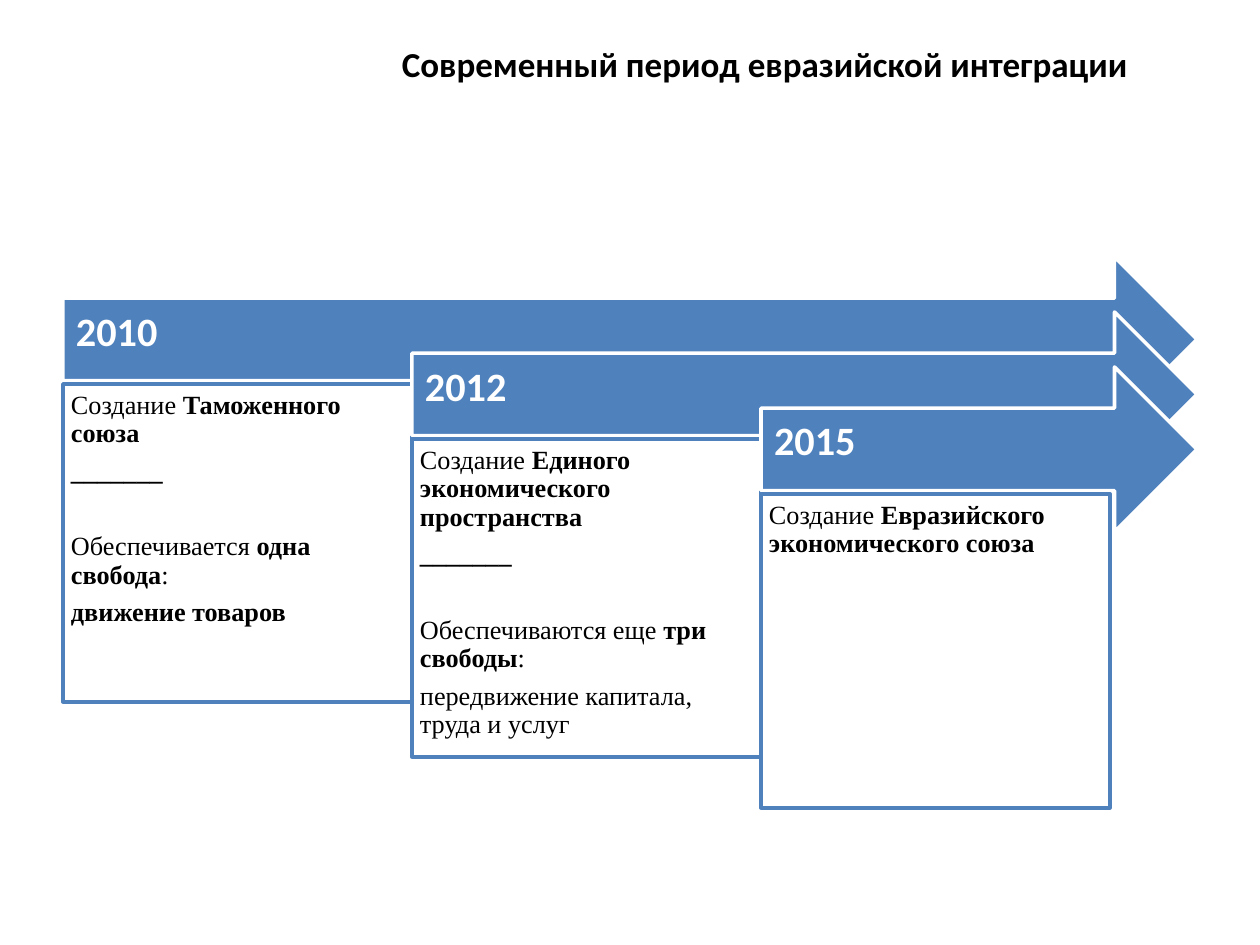
import pptx
import pptx.dml.color
import pptx.enum.shapes
import pptx.enum.text
import pptx.util

SCALE = 914400 / 126
BLUE, WHITE, BLACK = "4F81BD", "FFFFFF", "000000"
SHAPES = pptx.enum.shapes.MSO_SHAPE
ANCHOR = pptx.enum.text.MSO_ANCHOR
ALIGN = pptx.enum.text.PP_ALIGN

HEADING = {"name": "Calibri", "size": pptx.util.Pt(20), "bold": True}
YEAR = {"name": "Calibri", "size": pptx.util.Pt(23), "bold": True}
BODY = {"name": "Times New Roman", "size": pptx.util.Pt(15), "bold": False}
STRONG = {**BODY, "bold": True}
SPACED = {"line_spacing": 0.9, "space_after": pptx.util.Pt(5.25)}
AFTER_RULE = {**SPACED, "space_before": pptx.util.Pt(21.5)}
RULE = (SPACED, [("_______", STRONG)])

STAGES = [
    ("2010", 318, [
        (SPACED, [("Создание", BODY), (" Таможенного союза", STRONG)]),
        RULE,
        (AFTER_RULE, [("Обеспечивается ", BODY), ("одна свобода", STRONG), (":", BODY)]),
        (SPACED, [("движение товаров", STRONG)]),
    ]),
    ("2012", 318, [
        (SPACED, [("Создание ", BODY), ("Единого экономического пространства", STRONG)]),
        RULE,
        (AFTER_RULE, [("Обеспечиваются еще ", BODY), ("три свободы", STRONG), (":", BODY)]),
        (SPACED, [("передвижение капитала, труда и услуг", BODY)]),
    ]),
    ("2015", 314, [
        (SPACED, [("Создание ", BODY), ("Евразийского экономического союза", STRONG)]),
    ]),
]


def px(length):
    """Turn whole pixels into EMU."""
    return pptx.util.Emu(round(length * SCALE))


def color(value):
    """Turn a hex string into a colour."""
    return pptx.dml.color.RGBColor.from_string(value)


def apply_values(target, values):
    """Set every attribute named in a dict of format values."""
    for name, value in values.items():
        setattr(target, name, value)


def write_text(shape, paragraphs, ink, anchor, insets, align=ALIGN.LEFT):
    """Fill a shape with paragraphs of formatted runs."""
    frame = shape.text_frame
    sides = ("margin_left", "margin_top", "margin_right", "margin_bottom")
    apply_values(frame, dict(zip(sides, map(px, insets))))
    apply_values(frame, {"word_wrap": True, "vertical_anchor": anchor})
    for index, (layout, runs) in enumerate(paragraphs):
        paragraph = frame.add_paragraph() if index else frame.paragraphs[0]
        apply_values(paragraph, {**layout, "alignment": align})
        for text, style in runs:
            run = paragraph.add_run()
            run.text = text
            apply_values(run.font, style)
            run.font.color.rgb = color(ink)


def add_panel(slide, preset, box, fill, line):
    """Add a flat preset shape with a two-point outline."""
    shape = slide.shapes.add_shape(preset, *map(px, box))
    shape.shadow.inherit = False
    shape.fill.solid()
    shape.fill.fore_color.rgb = color(fill)
    shape.line.color.rgb = color(line)
    shape.line.width = pptx.util.Pt(2)
    return shape


def add_title(slide, box):
    """Place the slide heading in its box."""
    title = slide.shapes.add_textbox(*map(px, box))
    runs = [("Современный период евразийской интеграции", HEADING)]
    write_text(title, [({}, runs)], BLACK, ANCHOR.MIDDLE, (0, 0, 0, 0), ALIGN.CENTER)


def add_stage(slide, box, card_width, card_height, year, paragraphs):
    """Place a year arrow in its box and its description card below."""
    left, top, width, height = box
    arrow = add_panel(slide, SHAPES.RIGHT_ARROW, box, BLUE, WHITE)
    write_text(arrow, [(SPACED, [(year, YEAR)])], WHITE, ANCHOR.MIDDLE, (13, 13, 35, 26))
    card_box = (left, top + 127, card_width, card_height)
    card = add_panel(slide, SHAPES.RECTANGLE, card_box, WHITE, BLUE)
    write_text(card, paragraphs, BLACK, ANCHOR.TOP, (8, 8, 8, 8))


def add_timeline(slide, box):
    """Place the stages as steps down and to the right, sharing the right edge."""
    left, top, width, arrow_height = box
    step_x, step_y = 349, 55
    for index, (year, card_height, paragraphs) in enumerate(STAGES):
        shift = index * step_x
        arrow_box = (left + shift, top + index * step_y, width - shift, arrow_height)
        add_stage(slide, arrow_box, step_x, card_height, year, paragraphs)


def main():
    """Build the slide and save it."""
    presentation = pptx.Presentation()
    presentation.slide_width = px(1260)
    presentation.slide_height = px(945)
    slide = presentation.slides.add_slide(presentation.slide_layouts[6])
    add_title(slide, (298, 47, 934, 33))
    add_timeline(slide, (63, 257, 1134, 165))
    presentation.save("out.pptx")


if __name__ == "__main__":
    main()
